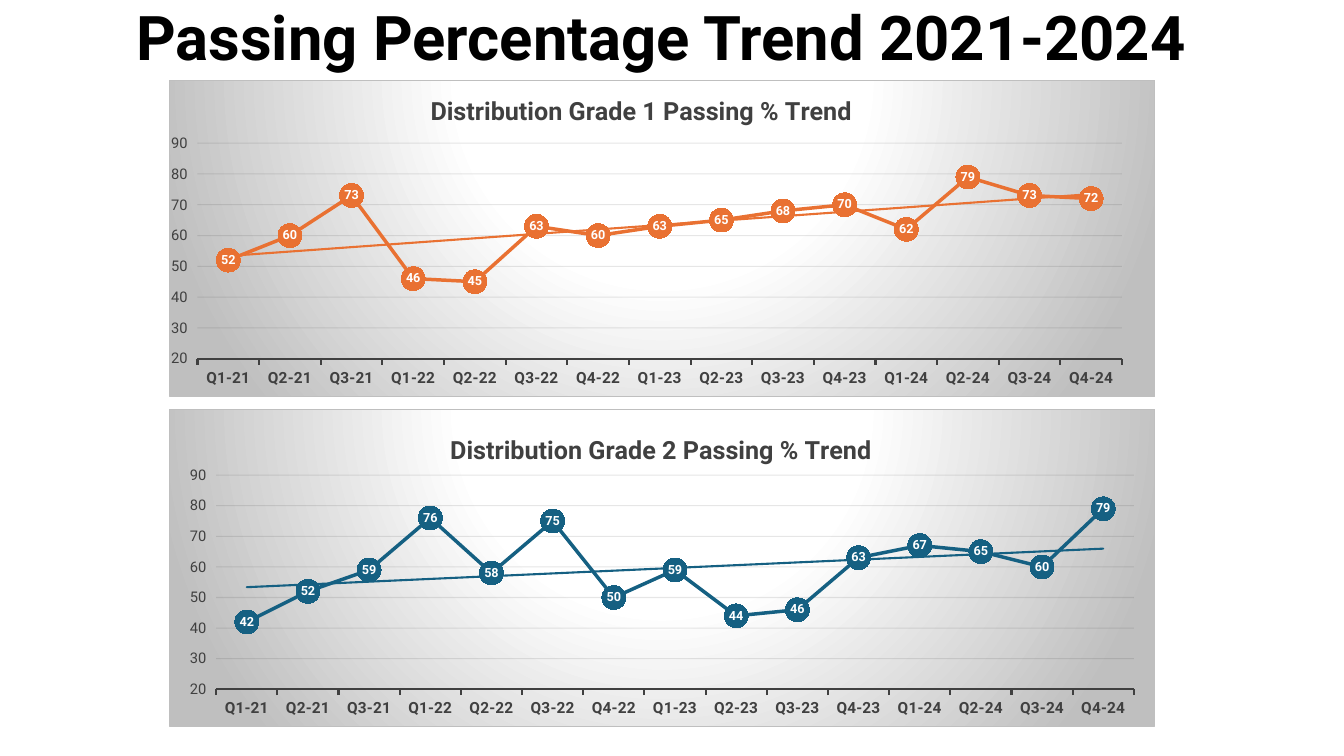
from dataclasses import dataclass

from lxml.etree import SubElement
from pptx import Presentation
from pptx.chart.data import CategoryChartData
from pptx.dml.color import RGBColor
from pptx.enum.chart import XL_CHART_TYPE as ChartType
from pptx.enum.chart import XL_LABEL_POSITION as LabelPosition
from pptx.enum.chart import XL_MARKER_STYLE as MarkerStyle
from pptx.enum.chart import XL_TICK_MARK as TickMark
from pptx.enum.text import MSO_ANCHOR, MSO_AUTO_SIZE, PP_ALIGN
from pptx.oxml import parse_xml
from pptx.oxml.ns import nsdecls, qn
from pptx.util import Cm, Pt

TITLE = "Passing Percentage Trend 2021-2024"
QUARTERS = ["Q1-21", "Q2-21", "Q3-21"] + [
    f"Q{quarter}-{year}" for year in (22, 23, 24) for quarter in (1, 2, 3, 4)
]
# Layouts are fractions of the chart: x, y and, for the plot, width and height.
CHARTS = [
    {
        "title": "Distribution Grade 1 Passing % Trend",
        "values": [52, 60, 73, 46, 45, 63, 60, 63, 65, 68, 70, 62, 79, 73, 72],
        "color": "E97132",
        "title_layout": (0.26, 0.03),
        "plot_layout": (0.028, 0.199, 0.939, 0.681),
    },
    {
        "title": "Distribution Grade 2 Passing % Trend",
        "values": [42, 52, 59, 76, 58, 75, 50, 59, 44, 46, 63, 67, 65, 60, 79],
        "color": "156082",
        "title_layout": (0.28, 0.06),
        "plot_layout": (0.047, 0.207, 0.932, 0.677),
    },
]

CHART_LEFT, CHART_TOP = 4.27, 2.01
CHART_WIDTH, CHART_HEIGHT, CHART_GAP = 24.84, 8.0, 0.3


@dataclass(frozen=True)
class Theme:
    font: str = "Roboto"
    black: str = "000000"
    white: str = "FFFFFF"
    text: str = "404040"
    grid: str = "0D0D0D"
    edge: str = "BFBFBF"
    title_size: float = 44
    chart_title_size: float = 18
    category_size: float = 11
    value_size: float = 10.5
    base_size: float = 10
    label_size: float = 9


THEME = Theme()


def style_font(font, size, color, bold=False):
    font.name = THEME.font
    font.size = Pt(size)
    font.bold = bold
    font.color.rgb = RGBColor.from_string(color)


def style_line(line, color, width):
    line.color.rgb = RGBColor.from_string(color)
    line.width = Pt(width)


def set_layout(parent, index, fractions):
    """Place a chart title or plot area by fractions of the chart."""
    for layout in parent.findall(qn("c:layout")):
        parent.remove(layout)
    target = '<c:layoutTarget val="inner"/>' if len(fractions) == 4 else ""
    modes = '<c:xMode val="edge"/><c:yMode val="edge"/>'
    places = "".join(
        f'<c:{name} val="{value}"/>' for name, value in zip("xywh", fractions)
    )
    parent.insert(index, parse_xml(
        f'<c:layout {nsdecls("c")}><c:manualLayout>{target}{modes}{places}'
        "</c:manualLayout></c:layout>"
    ))


def shade_background(chart):
    stops = ((0, THEME.white), (39, THEME.white), (100, THEME.edge))
    stop_xml = "".join(
        f'<a:gs pos="{place * 1000}"><a:srgbClr val="{color}"/></a:gs>'
        for place, color in stops
    )
    chart.element.find(qn("c:chart")).addnext(parse_xml(
        f'<c:spPr {nsdecls("c", "a")}><a:gradFill><a:gsLst>{stop_xml}</a:gsLst>'
        '<a:path path="circle"><a:fillToRect l="50000" t="-80000" r="50000" b="180000"/>'
        f'</a:path></a:gradFill><a:ln w="{Pt(0.75)}"><a:solidFill>'
        f'<a:srgbClr val="{THEME.edge}"/></a:solidFill></a:ln></c:spPr>'
    ))


def add_trend_line(chart, color):
    category_node = chart.element.xpath(".//c:ser/c:cat")[0]
    category_node.addprevious(parse_xml(
        f'<c:trendline {nsdecls("c", "a")}><c:spPr><a:ln w="{Pt(1.5)}" cap="rnd">'
        f'<a:solidFill><a:srgbClr val="{color}"/></a:solidFill></a:ln></c:spPr>'
        '<c:trendlineType val="linear"/><c:dispRSqr val="0"/><c:dispEq val="0"/>'
        "</c:trendline>"
    ))


def style_axes(chart):
    category_axis = chart.category_axis
    category_axis.major_tick_mark = TickMark.OUTSIDE
    style_font(category_axis.tick_labels.font, THEME.category_size, THEME.text, True)
    style_line(category_axis.format.line, THEME.text, 1.5)

    value_axis = chart.value_axis
    value_axis.minimum_scale, value_axis.maximum_scale = 20, 90
    value_axis.major_unit = 10
    value_axis.major_tick_mark = TickMark.OUTSIDE
    style_font(value_axis.tick_labels.font, THEME.value_size, THEME.text)
    value_axis.format.line.fill.background()
    style_line(value_axis.major_gridlines.format.line, THEME.grid, 0.75)
    grid_color = chart.element.xpath(".//c:majorGridlines//a:srgbClr")[0]
    SubElement(grid_color, qn("a:alpha"), val="10000")


def style_series(chart, color):
    series = chart.plots[0].series[0]
    series.smooth = False
    style_line(series.format.line, color, 2.5)
    marker = series.marker
    marker.style, marker.size = MarkerStyle.CIRCLE, 17
    marker.format.fill.solid()
    marker.format.fill.fore_color.rgb = RGBColor.from_string(color)
    marker.format.line.fill.background()
    labels = series.data_labels
    labels.show_value = True
    labels.position = LabelPosition.CENTER
    style_font(labels.font, THEME.label_size, THEME.white, True)
    add_trend_line(chart, color)


def add_trend_chart(slide, top, content):
    data = CategoryChartData()
    data.categories = QUARTERS
    data.add_series("Series 1", content["values"])
    chart = slide.shapes.add_chart(
        ChartType.LINE_MARKERS, Cm(CHART_LEFT), Cm(top),
        Cm(CHART_WIDTH), Cm(CHART_HEIGHT), data,
    ).chart
    chart.has_legend = False
    chart.plots[0].vary_by_categories = False
    style_font(chart.font, THEME.base_size, THEME.black)
    shade_background(chart)

    run = chart.chart_title.text_frame.paragraphs[0].add_run()
    run.text = content["title"]
    style_font(run.font, THEME.chart_title_size, THEME.text, True)
    set_layout(chart.element.xpath("c:chart/c:title")[0], 1, content["title_layout"])
    set_layout(chart.element.xpath("c:chart/c:plotArea")[0], 0, content["plot_layout"])

    style_axes(chart)
    style_series(chart, content["color"])


def fill_title(title):
    title.left, title.top = Cm(1.78), Cm(-0.79)
    title.width, title.height = Cm(29.79), Cm(2.79)
    frame = title.text_frame
    frame.word_wrap = True
    frame.auto_size = MSO_AUTO_SIZE.NONE
    frame.vertical_anchor = MSO_ANCHOR.BOTTOM
    paragraph = frame.paragraphs[0]
    paragraph.alignment = PP_ALIGN.CENTER
    paragraph.line_spacing = 0.9
    run = paragraph.add_run()
    run.text = TITLE
    style_font(run.font, THEME.title_size, THEME.black, True)


def main():
    presentation = Presentation()
    presentation.slide_width, presentation.slide_height = Cm(33.87), Cm(19.05)
    slide = presentation.slides.add_slide(presentation.slide_layouts[5])
    fill_title(slide.shapes.title)
    for row, content in enumerate(CHARTS):
        add_trend_chart(slide, CHART_TOP + row * (CHART_HEIGHT + CHART_GAP), content)
    presentation.save("out.pptx")


if __name__ == "__main__":
    main()
